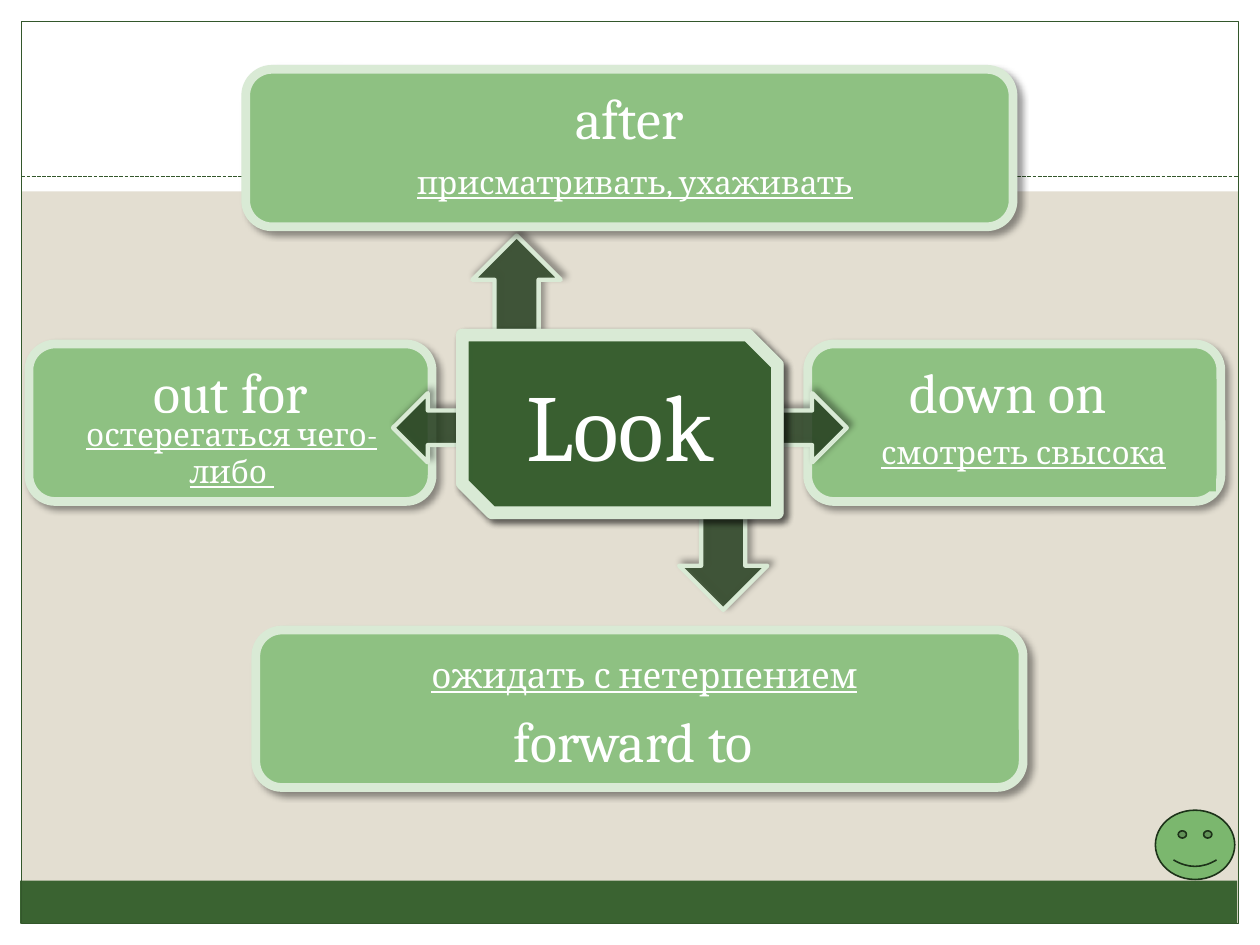
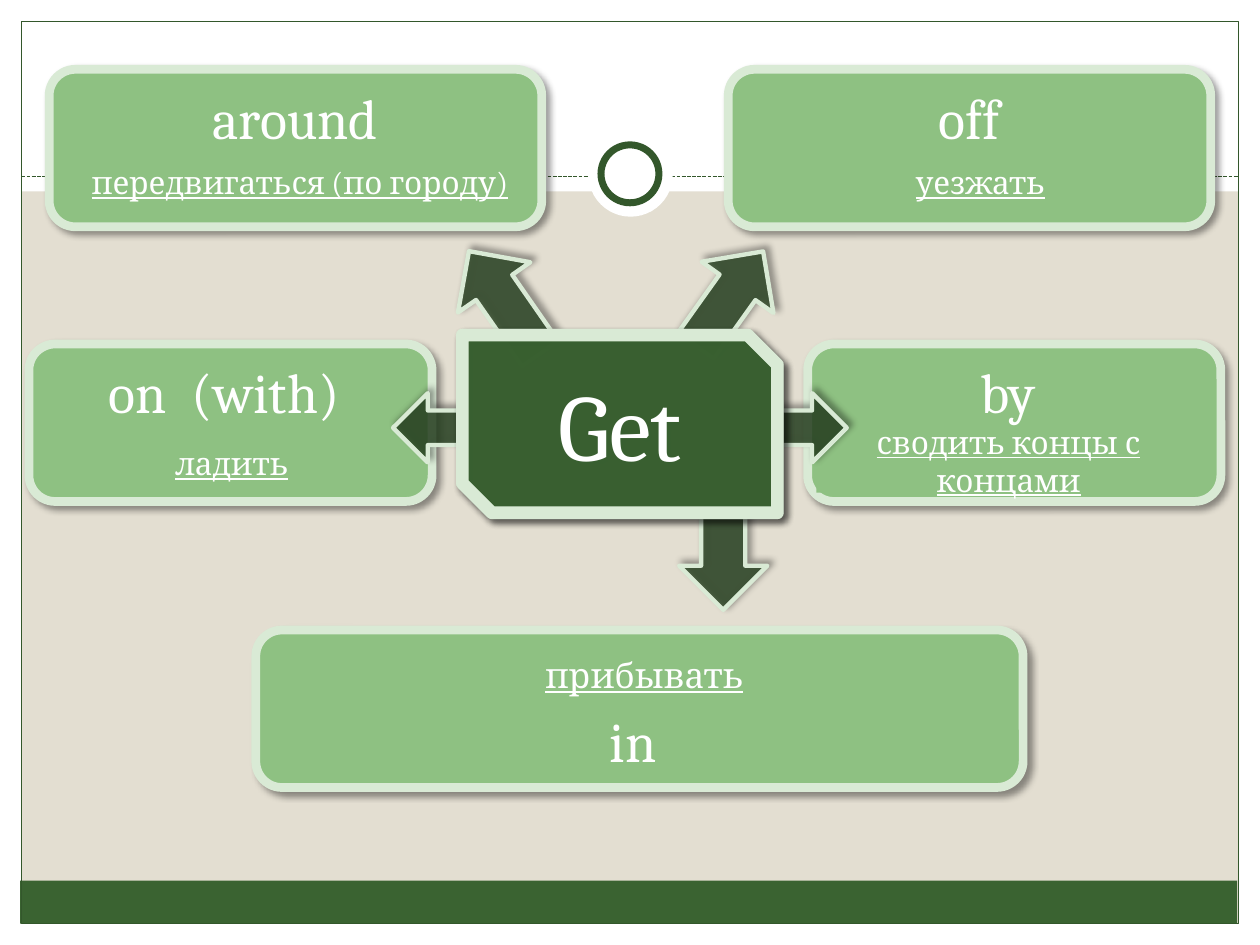
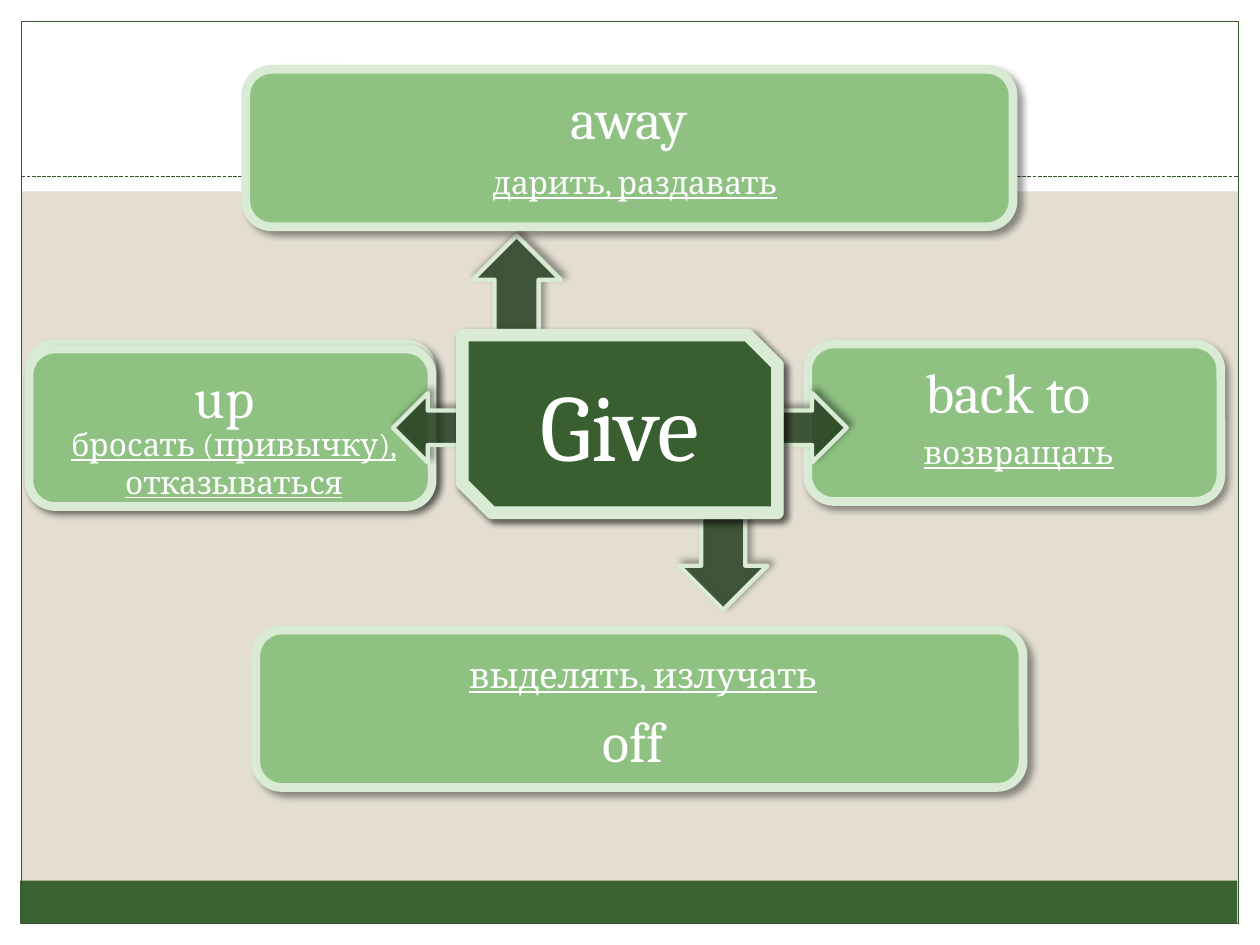
from dataclasses import dataclass
from typing import NamedTuple, Optional

import pptx
import pptx.dml.color
import pptx.enum.dml
import pptx.enum.shapes
import pptx.enum.text
import pptx.oxml.ns
import pptx.util
from lxml import etree

Inches = pptx.util.Inches
Pt = pptx.util.Pt
Preset = pptx.enum.shapes.MSO_SHAPE
Anchor = pptx.enum.text.MSO_ANCHOR
qn = pptx.oxml.ns.qn

FONT = "Cambria"
COLORS = {
    "paper": "E3DED1",
    "white": "FFFFFF",
    "footer": "3A6331",
    "frame": "33572B",
    "panel": "8EC182",
    "outline": "D9EAD5",
    "hub": "3B6432",
    "arrow": "274221",
    "smiley": "7BB76E",
    "smiley_line": "1D3219",
    "shadow": "000000",
}


class Box(NamedTuple):
    left: float
    top: float
    width: float
    height: float


class Arrow(NamedTuple):
    box: Box
    rotation: float = 0
    flipped: bool = False


@dataclass
class Branch:
    """A particle on a rounded panel, with its translation on a label."""
    panel: Box
    particle: str
    label: Box
    meaning: str
    at_bottom: bool = False


@dataclass
class VerbSlide:
    verb: str
    upper_arrows: list[Arrow]
    branches: list[Branch]
    has_ring: bool = False
    back_panel: Optional[Box] = None
    smiley: Optional[Box] = None


MARGIN_BANDS = [
    Box(0, 7.33, 10, 0.17),
    Box(0, 0, 10, 1.52),
    Box(0, 0, 0.17, 7.5),
    Box(9.83, 0, 0.17, 7.5),
]
FOOTER = Box(0.16, 6.99, 9.66, 0.34)
FRAME = Box(0.17, 0.17, 9.66, 7.16)
RULE_TOP = 1.4
RING_GAP = Box(4.67, 1.05, 0.67, 0.67)
RING = Box(4.77, 1.15, 0.46, 0.46)

HUB = Box(3.67, 2.66, 2.5, 1.41)
TOP = Box(1.95, 0.55, 6.09, 1.25)
TOP_LEFT = Box(0.39, 0.55, 3.91, 1.25)
TOP_RIGHT = Box(5.78, 0.55, 3.83, 1.25)
LEFT = Box(0.23, 2.73, 3.2, 1.25)
RIGHT = Box(6.41, 2.73, 3.28, 1.25)
BOTTOM = Box(2.03, 5, 6.09, 1.25)
TOP_LABEL = Box(2.19, 1.25, 5.7, 0.39)

UP_ARROW = Arrow(Box(3.71, 1.91, 0.78, 0.7), 270)
UP_LEFT_ARROW = Arrow(Box(3.51, 2.05, 0.99, 0.7), 235.2)
UP_RIGHT_ARROW = Arrow(Box(5.33, 2.02, 0.92, 0.7), 305.5)
DOWN_ARROW = Arrow(Box(5.35, 4.1, 0.78, 0.7), 270, True)
SIDE_ARROWS = [
    Arrow(Box(3.12, 3.12, 0.55, 0.55), flipped=True),
    Arrow(Box(6.17, 3.12, 0.55, 0.55)),
]

VERB_SLIDES = [
    VerbSlide(
        "Look",
        [UP_ARROW],
        [
            Branch(RIGHT, "down on ", Box(6.6, 3.28, 3.05, 0.62), "смотреть свысока"),
            Branch(LEFT, "out for", Box(0.55, 3.28, 2.58, 0.62), "остерегаться чего-либо "),
            Branch(BOTTOM, "forward to ", Box(2.81, 5.16, 4.61, 0.39),
                   "ожидать с нетерпением", at_bottom=True),
            Branch(TOP, "after", TOP_LABEL, "присматривать, ухаживать"),
        ],
        smiley=Box(9.17, 6.43, 0.63, 0.55),
    ),
    VerbSlide(
        "Get",
        [UP_RIGHT_ARROW, UP_LEFT_ARROW],
        [
            Branch(RIGHT, "by ", Box(6.48, 3.4, 3.05, 0.51), "сводить концы с концами"),
            Branch(LEFT, "on  (with) ", Box(0.55, 3.44, 2.58, 0.47), "ладить"),
            Branch(BOTTOM, "in ", Box(2.34, 5.16, 5.55, 0.39), "прибывать", at_bottom=True),
            Branch(TOP_LEFT, "around", Box(0.62, 1.25, 3.52, 0.39), "передвигаться (по городу)"),
            Branch(TOP_RIGHT, "off", Box(6.02, 1.25, 3.52, 0.39), "уезжать"),
        ],
        has_ring=True,
    ),
    VerbSlide(
        "Give",
        [UP_ARROW],
        [
            Branch(RIGHT, "back to ", Box(6.56, 3.28, 3.05, 0.62), "возвращать"),
            Branch(LEFT._replace(top=2.77), "up ", Box(0.35, 3.44, 3.01, 0.47),
                   "бросать (привычку), отказываться"),
            Branch(BOTTOM, "off ", Box(2.32, 5.16, 5.57, 0.39),
                   "выделять, излучать", at_bottom=True),
            Branch(TOP, "away", TOP_LABEL, "дарить, раздавать"),
        ],
        back_panel=LEFT,
    ),
]


def rgb(name: str) -> pptx.dml.color.RGBColor:
    return pptx.dml.color.RGBColor.from_string(COLORS[name])


def add_alpha(color_element, percent: float) -> None:
    etree.SubElement(color_element, qn("a:alpha"), val=str(round(percent * 1000)))


def add_shadow(shape, direction: float) -> None:
    effects = shape._element.spPr.find(qn("a:effectLst"))
    shadow = etree.SubElement(
        effects, qn("a:outerShdw"), blurRad=str(Pt(4)), dist=str(Pt(3)),
        dir=str(round(direction * 60000)), algn="ctr", rotWithShape="0")
    color = etree.SubElement(shadow, qn("a:srgbClr"), val=COLORS["shadow"])
    add_alpha(color, 40)


def add_box(slide, preset, box: Box, *, fill: Optional[str] = None,
            opacity: float = 100, line: Optional[str] = None,
            line_width: float = 0.75, shadow_direction: Optional[float] = None):
    shape = slide.shapes.add_shape(preset, *map(Inches, box))
    shape.shadow.inherit = False
    if fill:
        shape.fill.solid()
        shape.fill.fore_color.rgb = rgb(fill)
        if opacity < 100:
            add_alpha(shape._element.spPr.find(f"{qn('a:solidFill')}/{qn('a:srgbClr')}"), opacity)
    else:
        shape.fill.background()
    if line:
        shape.line.color.rgb = rgb(line)
        shape.line.width = Pt(line_width)
    else:
        shape.line.fill.background()
    if shadow_direction is not None:
        add_shadow(shape, shadow_direction)
    return shape


def write_text(shape, text: str, *, size: float, underline: bool = False,
               anchor=Anchor.MIDDLE) -> None:
    frame = shape.text_frame
    frame.word_wrap = True
    frame.vertical_anchor = anchor
    paragraph = frame.paragraphs[0]
    paragraph.alignment = pptx.enum.text.PP_ALIGN.CENTER
    run = paragraph.add_run()
    run.text = text
    run.font.name = FONT
    run.font.size = Pt(size)
    run.font.underline = underline or None
    run.font.color.rgb = rgb("white")


def draw_background(slide, has_ring: bool) -> None:
    slide.background.fill.solid()
    slide.background.fill.fore_color.rgb = rgb("paper")
    for band in MARGIN_BANDS:
        add_box(slide, Preset.RECTANGLE, band, fill="white")
    add_box(slide, Preset.RECTANGLE, FOOTER, fill="footer")
    add_box(slide, Preset.RECTANGLE, FRAME, line="frame")
    rule = slide.shapes.add_connector(
        pptx.enum.shapes.MSO_CONNECTOR.STRAIGHT, Inches(FRAME.left), Inches(RULE_TOP),
        Inches(FRAME.left + FRAME.width), Inches(RULE_TOP))
    rule.line.color.rgb = rgb("frame")
    rule.line.width = Pt(0.75)
    rule.line.dash_style = pptx.enum.dml.MSO_LINE.SQUARE_DOT
    etree.SubElement(rule._element.spPr, qn("a:effectLst"))
    if has_ring:
        add_box(slide, Preset.OVAL, RING_GAP, fill="white")
        add_box(slide, Preset.OVAL, RING, fill="white", line="frame", line_width=4)


def draw_arrow(slide, arrow: Arrow) -> None:
    shape = add_box(slide, Preset.RIGHT_ARROW, arrow.box, fill="arrow", opacity=79,
                    line="outline", line_width=2.5, shadow_direction=315)
    shape.rotation = arrow.rotation
    if arrow.flipped:
        shape._element.spPr.find(qn("a:xfrm")).set("flipH", "1")


def draw_panel(slide, box: Box):
    return add_box(slide, Preset.ROUNDED_RECTANGLE, box, fill="panel",
                   line="outline", line_width=5, shadow_direction=45)


def draw_branch(slide, branch: Branch) -> None:
    panel = draw_panel(slide, branch.panel)
    write_text(panel, branch.particle, size=32,
               anchor=Anchor.BOTTOM if branch.at_bottom else Anchor.TOP)
    label = add_box(slide, Preset.RECTANGLE, branch.label, fill="panel")
    write_text(label, branch.meaning, size=20 if branch.at_bottom else 18, underline=True)


def draw_hub(slide, verb: str) -> None:
    """Stack two translucent plates and write the verb on the upper one."""
    for _ in range(2):
        plate = add_box(slide, Preset.SNIP_2_DIAG_RECTANGLE, HUB, fill="hub", opacity=88,
                        line="outline", line_width=7.25, shadow_direction=45)
    write_text(plate, verb, size=54)


def draw_verb_slide(slide, content: VerbSlide) -> None:
    draw_background(slide, content.has_ring)
    for arrow in [DOWN_ARROW, *content.upper_arrows]:
        draw_arrow(slide, arrow)
    if content.back_panel:
        draw_panel(slide, content.back_panel)
    for branch in content.branches:
        draw_branch(slide, branch)
    for arrow in SIDE_ARROWS:
        draw_arrow(slide, arrow)
    draw_hub(slide, content.verb)
    if content.smiley:
        add_box(slide, Preset.SMILEY_FACE, content.smiley, fill="smiley",
                line="smiley_line", line_width=0.9)


def main() -> None:
    presentation = pptx.Presentation()
    presentation.slide_width = Inches(10)
    presentation.slide_height = Inches(7.5)
    blank_layout = presentation.slide_layouts[6]
    for content in VERB_SLIDES:
        draw_verb_slide(presentation.slides.add_slide(blank_layout), content)
    presentation.save("out.pptx")


if __name__ == "__main__":
    main()
